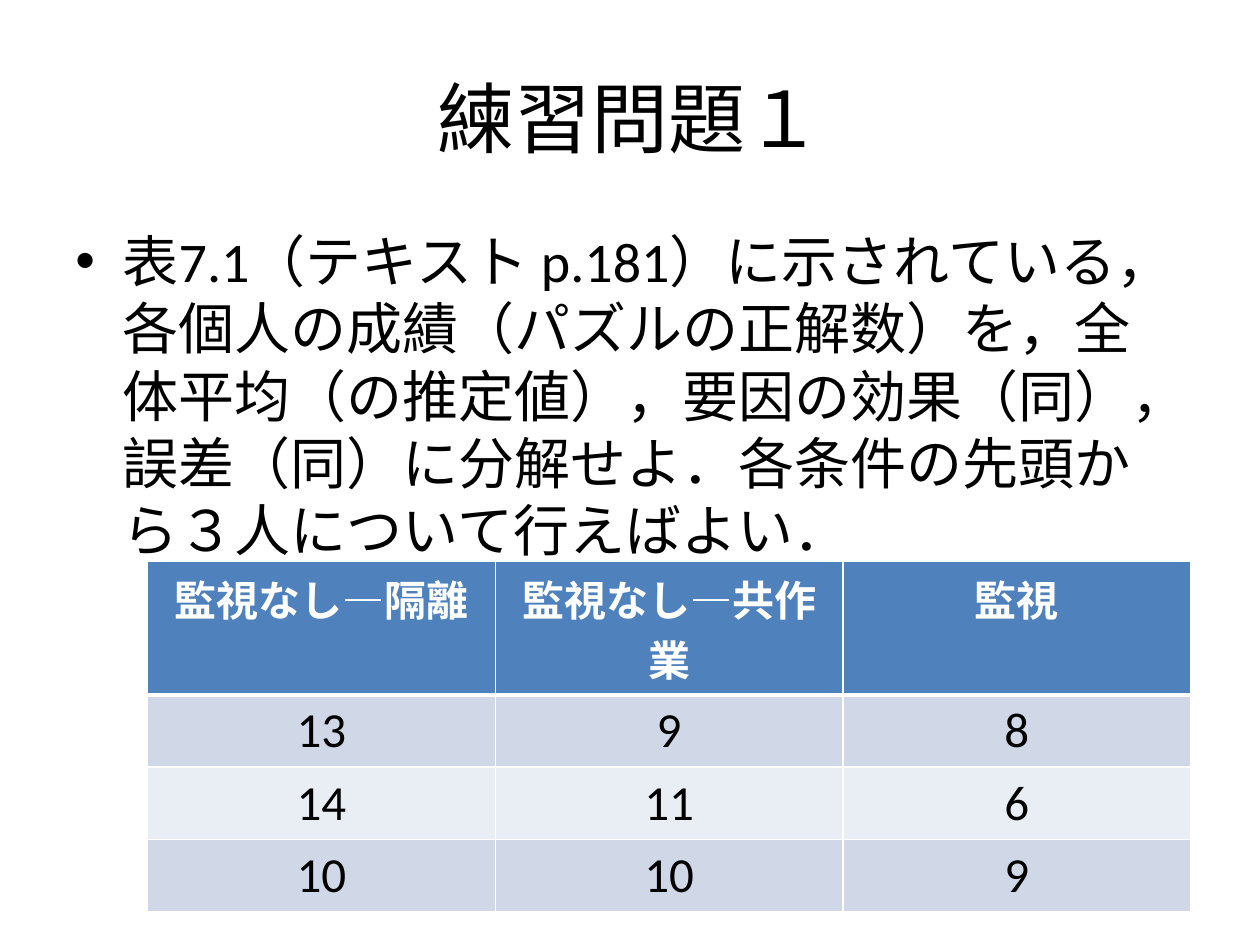
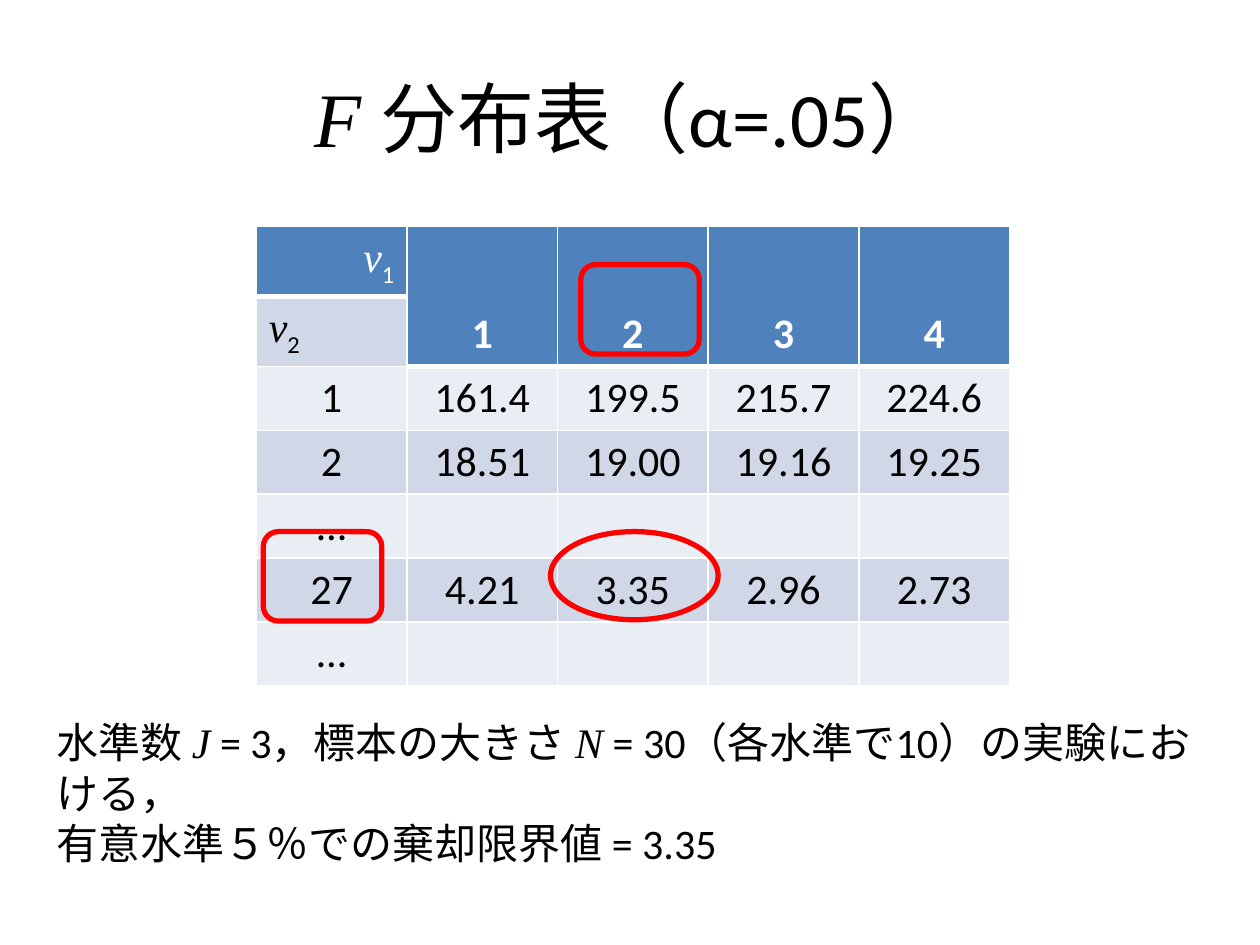
from lxml.etree import SubElement
from pptx import Presentation
from pptx.dml.color import RGBColor
from pptx.enum.shapes import MSO_SHAPE as Preset
from pptx.enum.text import MSO_ANCHOR as Anchor, PP_ALIGN as Align
from pptx.oxml import parse_xml
from pptx.oxml.ns import nsdecls, qn
from pptx.util import Pt

COLORS = {
    "ink": "000000", "white": "FFFFFF", "header": "4F81BD",
    "band_dark": "D0D8E8", "band_light": "E9EDF4", "mark": "FF0000",
}
FONT, SYMBOL_FONT = "Calibri", "Times New Roman"


def rgb(name):
    return RGBColor.from_string(COLORS[name])


def symbol(letter):
    return letter, "symbol"


def sub(text):
    return text, "sub"


def write(frame, *lines, size=24, color="ink", bold=False, align=None):
    """Fill a text frame; a line is a string or a list of strings, symbol() and sub()."""
    for index, line in enumerate(lines):
        paragraph = frame.add_paragraph() if index else frame.paragraphs[0]
        paragraph.alignment = align
        for part in [line] if isinstance(line, str) else line:
            text, kind = (part, "plain") if isinstance(part, str) else part
            run = paragraph.add_run()
            run.text = text
            font = run.font
            font.size, font.bold, font.italic = Pt(size), bold, kind == "symbol"
            font.name = SYMBOL_FONT if kind == "symbol" else FONT
            font.color.rgb = rgb(color)
            if kind == "sub":
                run._r.get_or_add_rPr().set("baseline", "-25000")


def set_borders(cell, top, bottom):
    """Draw white cell borders; they must come before the fill in the XML."""
    widths = {"lnL": 1, "lnR": 1, "lnT": top, "lnB": bottom}
    properties = cell._tc.get_or_add_tcPr()
    for index, (side, width) in enumerate(widths.items()):
        properties.insert(index, parse_xml(
            f'<a:{side} {nsdecls("a")} w="{Pt(width)}"><a:solidFill>'
            f'<a:srgbClr val="{COLORS["white"]}"/></a:solidFill></a:{side}>'))


class Deck:
    def __init__(self):
        self.file = Presentation()
        self.file.slide_width, self.file.slide_height = Pt(720), Pt(540)
        self.slide = None

    def new_slide(self, *title):
        self.slide = self.file.slides.add_slide(self.file.slide_layouts[6])
        frame = self.text_box(36, 21.6, 648, 90, title, size=44, align=Align.CENTER)
        frame.vertical_anchor = Anchor.MIDDLE

    def text_box(self, left, top, width, height, *lines, **style):
        frame = self.slide.shapes.add_textbox(
            Pt(left), Pt(top), Pt(width), Pt(height)).text_frame
        frame.word_wrap = True
        write(frame, *lines, **style)
        return frame

    def bullet(self, left, top, width, height, text):
        frame = self.text_box(left, top, width, height, text, size=32)
        paragraph = frame.paragraphs[0]
        paragraph.space_before = Pt(6.4)
        properties = paragraph._p.get_or_add_pPr()
        properties.set("marL", str(Pt(27)))
        properties.set("indent", str(Pt(-27)))
        SubElement(properties, qn("a:buFont")).set("typeface", "Arial")
        SubElement(properties, qn("a:buChar")).set("char", "•")

    def table(self, left, top, width, row_heights, rows, header_depths, body_size):
        """Draw a banded table; header_depths gives the header rows of each column."""
        columns = len(header_depths)
        table = self.slide.shapes.add_table(
            len(rows), columns, Pt(left), Pt(top), Pt(width), Pt(sum(row_heights))).table
        for column in table.columns:
            column.width = Pt(width / columns)
        for r, (height, row) in enumerate(zip(row_heights, rows)):
            table.rows[r].height = Pt(height)
            for c, depth in enumerate(header_depths):
                cell, header = table.cell(r, c), r < depth
                band = "band_dark" if r % 2 else "band_light"
                cell.fill.solid()
                cell.fill.fore_color.rgb = rgb("header" if header else band)
                set_borders(cell, 3 if r == depth else 1, 3 if header else 1)
                content = row[c] if c < len(row) else ""
                if content:
                    plain = isinstance(content, str)
                    write(cell.text_frame, content, size=24 if header else body_size,
                          color="white" if header else "ink", bold=header and plain,
                          align=Align.CENTER if plain else None)
        for c, depth in enumerate(header_depths):
            if depth > 1:
                table.cell(0, c).merge(table.cell(depth - 1, c))
                table.cell(0, c).vertical_anchor = Anchor.BOTTOM
        return table

    def mark(self, preset, left, top, width, height):
        outline = self.slide.shapes.add_shape(
            preset, Pt(left), Pt(top), Pt(width), Pt(height))
        outline.shadow.inherit = False
        outline.fill.background()
        outline.line.color.rgb = rgb("mark")
        outline.line.width = Pt(3)


def exercise(deck):
    deck.new_slide("練習問題１")
    deck.bullet(36, 126, 648, 356.4,
                "表7.1（テキスト p.181）に示されている，各個人の成績（パズルの正解数）を，"
                "全体平均（の推定値），要因の効果（同），誤差（同）に分解せよ．"
                "各条件の先頭から３人について行えばよい．")
    scores = [
        ["監視なし―隔離", "監視なし―共作業", "監視"],
        ["13", "9", "8"],
        ["14", "11", "6"],
        ["10", "10", "9"],
    ]
    deck.table(84.3, 320.6, 596.2, [76.5] + [41.3] * 3, scores, [1, 1, 1], body_size=28)


def f_distribution(deck):
    deck.new_slide(symbol("F "), "分布表（α=.05）")
    critical_values = [
        [[symbol("ν"), sub("1")], "1", "2", "3", "4"],
        [[symbol("ν"), sub("2")]],
        ["1", "161.4", "199.5", "215.7", "224.6"],
        ["2", "18.51", "19.00", "19.16", "19.25"],
        ["…"],
        ["27", "4.21", "3.35", "2.96", "2.73"],
        ["…"],
    ]
    table = deck.table(146.4, 129.4, 430.5, [39.4] * 2 + [36.5] * 5, critical_values,
                       [1, 2, 2, 2, 2], body_size=24)
    table.cell(0, 0).text_frame.paragraphs[0].alignment = Align.RIGHT
    deck.mark(Preset.OVAL, 314.6, 303.8, 95.8, 50.4)
    deck.text_box(25.2, 406, 681.8, 65.5,
                  ["水準数 ", symbol("J"), " = 3，標本の大きさ ", symbol("N"),
                   " = 30（各水準で10）の実験における，"],
                  "有意水準５％での棄却限界値 = 3.35")
    for left, top in [(331.9, 151.2), (150.5, 303.8)]:
        deck.mark(Preset.ROUNDED_RECTANGLE, left, top, 67.7, 51.1)


def main():
    deck = Deck()
    exercise(deck)
    f_distribution(deck)
    deck.file.save("out.pptx")


if __name__ == "__main__":
    main()
